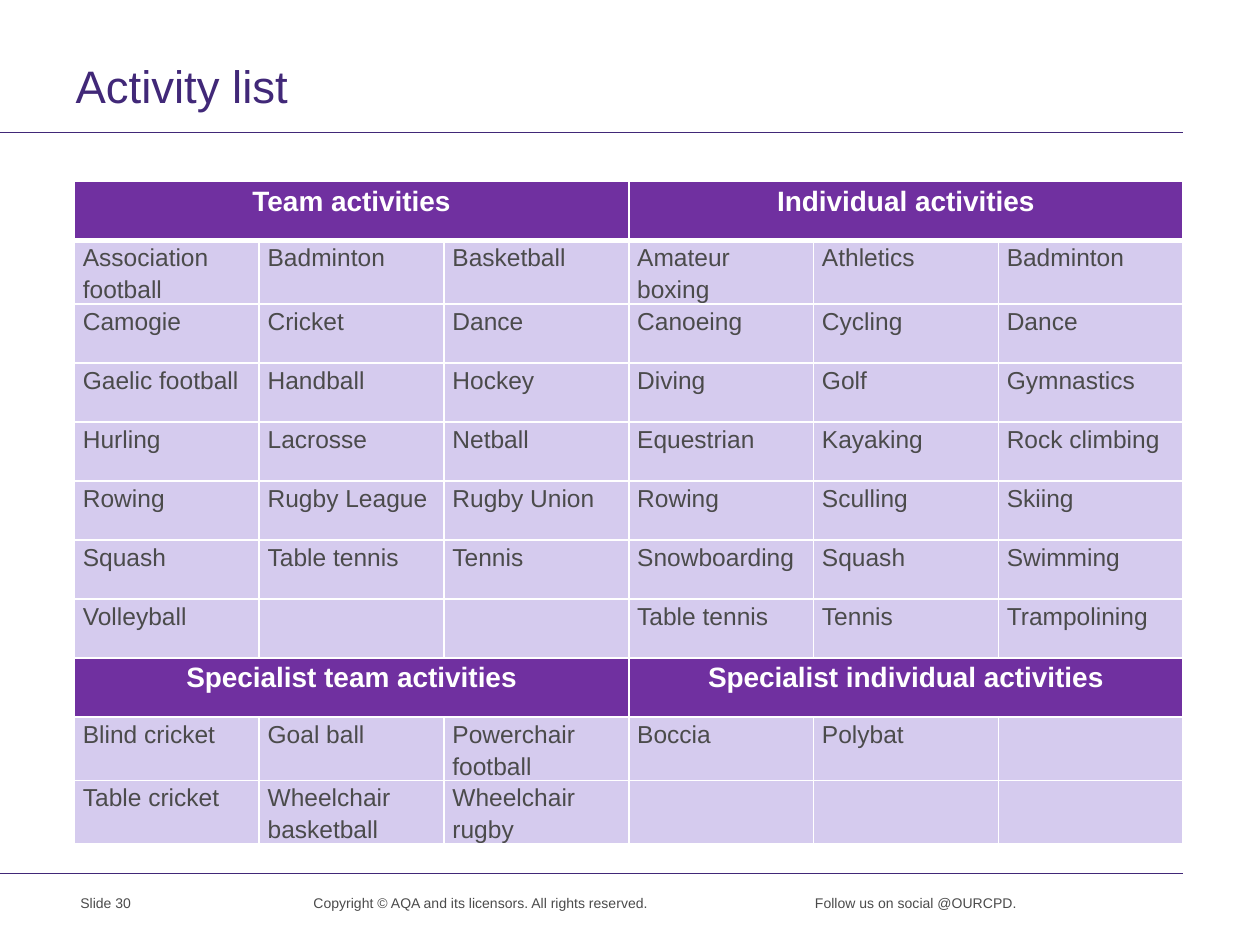
from lxml.etree import SubElement
from pptx import Presentation
from pptx.dml.color import RGBColor
from pptx.enum.text import MSO_ANCHOR, PP_ALIGN
from pptx.oxml import parse_xml
from pptx.oxml.ns import nsdecls, qn
from pptx.util import Cm, Pt

THEME = {
    "font": "Arial",
    "title": {"size": Pt(26), "color": "412878", "bold": False},
    "header": {"size": Pt(16), "color": "FFFFFF", "bold": True},
    "cell": {"size": Pt(14), "color": "4B4B4B", "bold": False},
    "footer": {"size": Pt(8), "color": "4B4B4B", "bold": False},
    "rule": "412878",
    "header_fill": "7030A0",
    "cell_fill": "D5CBEE",
    "border": "FFFFFF",
}


def write(p, text, style):
    """Add a run of text to a paragraph in one of the theme's styles."""
    r = p.add_run()
    r.text = text
    for name in ("size", "bold"):
        setattr(r.font, name, THEME[style][name])
    r.font.name = THEME["font"]
    r.font.color.rgb = RGBColor.from_string(THEME[style]["color"])


def add_borders(cell, bottom_width):
    """Draw the four borders of a cell; call before setting its fill."""
    tcPr = cell._tc.get_or_add_tcPr()
    for side in ("L", "R", "T", "B"):
        width = bottom_width if side == "B" else Pt(1)
        tcPr.append(parse_xml(
            f'<a:ln{side} {nsdecls("a")} w="{width}"><a:solidFill>'
            f'<a:srgbClr val="{THEME["border"]}"/></a:solidFill></a:ln{side}>'))


prs = Presentation()
prs.slide_width, prs.slide_height = Cm(25.4), Cm(19.05)
s = prs.slides.add_slide(prs.slide_layouts[5])

# Rules above and below the content
for y in (2.67, 17.6):
    line = s.shapes.add_connector(1, Cm(0), Cm(y), Cm(23.85), Cm(y))
    line.line.color.rgb = RGBColor.from_string(THEME["rule"])
    line.line.width = Pt(0.6)
    SubElement(line._element.spPr, qn("a:effectLst"))

# Title
title = s.shapes.title
box = {"left": Cm(1.27), "top": Cm(1.12), "width": Cm(22.86), "height": Cm(1.32)}
for name, value in box.items():
    setattr(title, name, value)
title.text_frame.vertical_anchor = MSO_ANCHOR.MIDDLE
p = title.text_frame.paragraphs[0]
p.alignment = PP_ALIGN.LEFT
p.line_spacing = Pt(28)
write(p, "Activity list", "title")

# Activity table: a row of two names is a heading over three columns each
rows = [
    ["Team activities", "Individual activities"],
    ["Association football", "Badminton", "Basketball",
     "Amateur boxing", "Athletics", "Badminton"],
    ["Camogie", "Cricket", "Dance", "Canoeing", "Cycling", "Dance"],
    ["Gaelic football", "Handball", "Hockey", "Diving", "Golf", "Gymnastics"],
    ["Hurling", "Lacrosse", "Netball", "Equestrian", "Kayaking", "Rock climbing"],
    ["Rowing", "Rugby League", "Rugby Union", "Rowing", "Sculling", "Skiing"],
    ["Squash", "Table tennis", "Tennis", "Snowboarding", "Squash", "Swimming"],
    ["Volleyball", "", "", "Table tennis", "Tennis", "Trampolining"],
    ["Specialist team activities", "Specialist individual activities"],
    ["Blind cricket", "Goal ball", "Powerchair football", "Boccia", "Polybat", ""],
    ["Table cricket", "Wheelchair basketball", "Wheelchair rugby", "", "", ""],
]
COLS, ROW_HEIGHT = 6, 1.19
table = s.shapes.add_table(len(rows), COLS, Cm(1.5), Cm(3.66), Cm(22.35),
                           Cm(ROW_HEIGHT * len(rows))).table
table.first_row = table.horz_banding = False
for row in table.rows:
    row.height = Cm(ROW_HEIGHT)

for i, names in enumerate(rows):
    span = COLS // len(names)
    style = "header" if span > 1 else "cell"
    for j in range(COLS):
        cell = table.cell(i, j)
        add_borders(cell, Pt(3) if i == 0 else Pt(1))
        cell.fill.solid()
        cell.fill.fore_color.rgb = RGBColor.from_string(THEME[style + "_fill"])
        cell.margin_left = cell.margin_right = Cm(0.17)
        cell.margin_top = cell.margin_bottom = Cm(0)
    for j, name in enumerate(names):
        cell = table.cell(i, j * span)
        if span > 1:
            cell.merge(table.cell(i, j * span + span - 1))
        if name:
            p = cell.text_frame.paragraphs[0]
            p.alignment = PP_ALIGN.CENTER if span > 1 else PP_ALIGN.LEFT
            p.line_spacing = 1.15
            p.space_after = Pt(3)
            write(p, name, style)

# Footer
for left, width, text in (
    (1.37, 2.06, "Slide 30"),
    (6.07, 7.44, "Copyright © AQA and its licensors. All rights reserved."),
    (16.18, 4.95, "Follow us on social @OURCPD."),
):
    sp = s.shapes.add_textbox(Cm(left), Cm(17.91), Cm(width), Cm(0.66))
    write(sp.text_frame.paragraphs[0], text, "footer")

prs.save("out.pptx")
